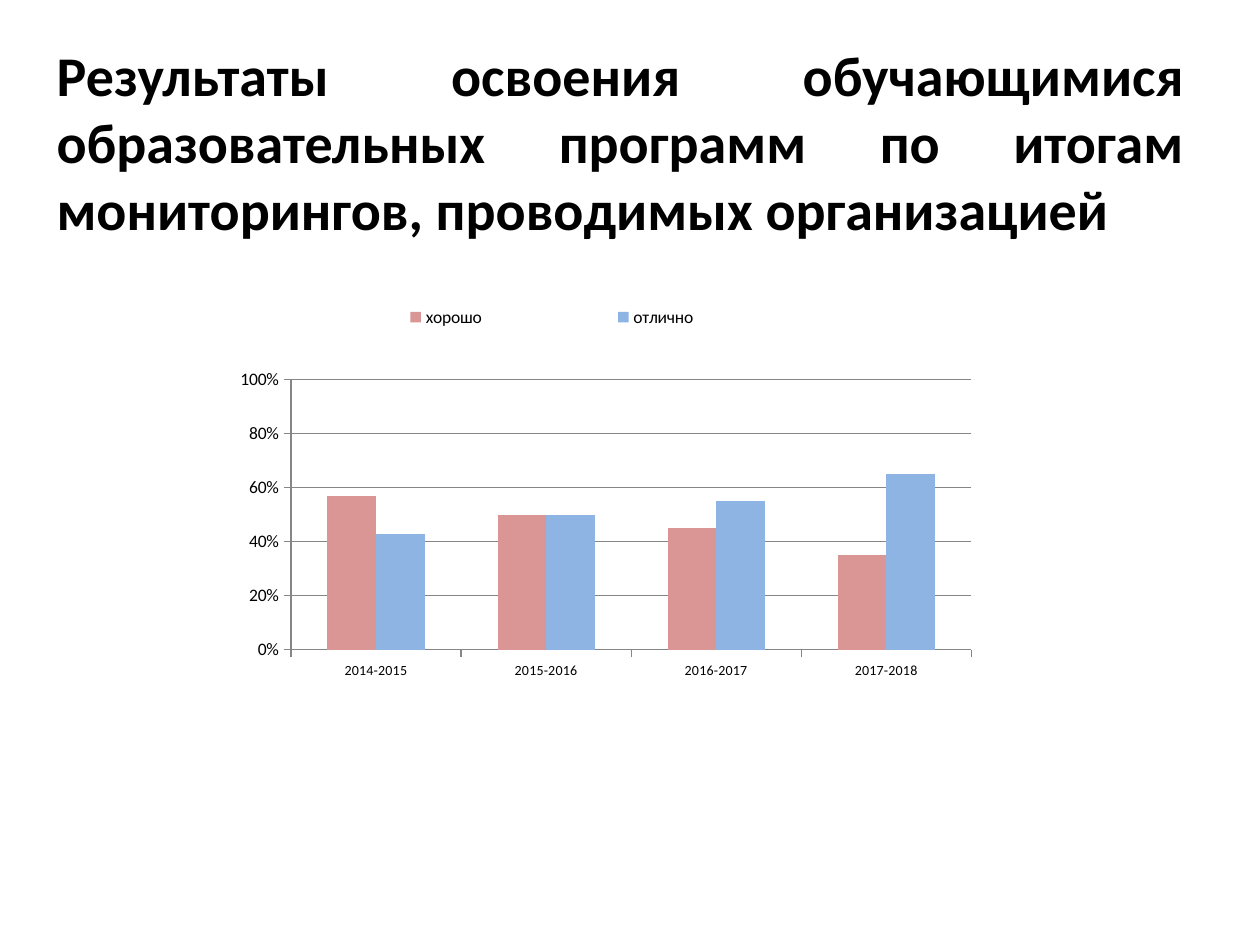
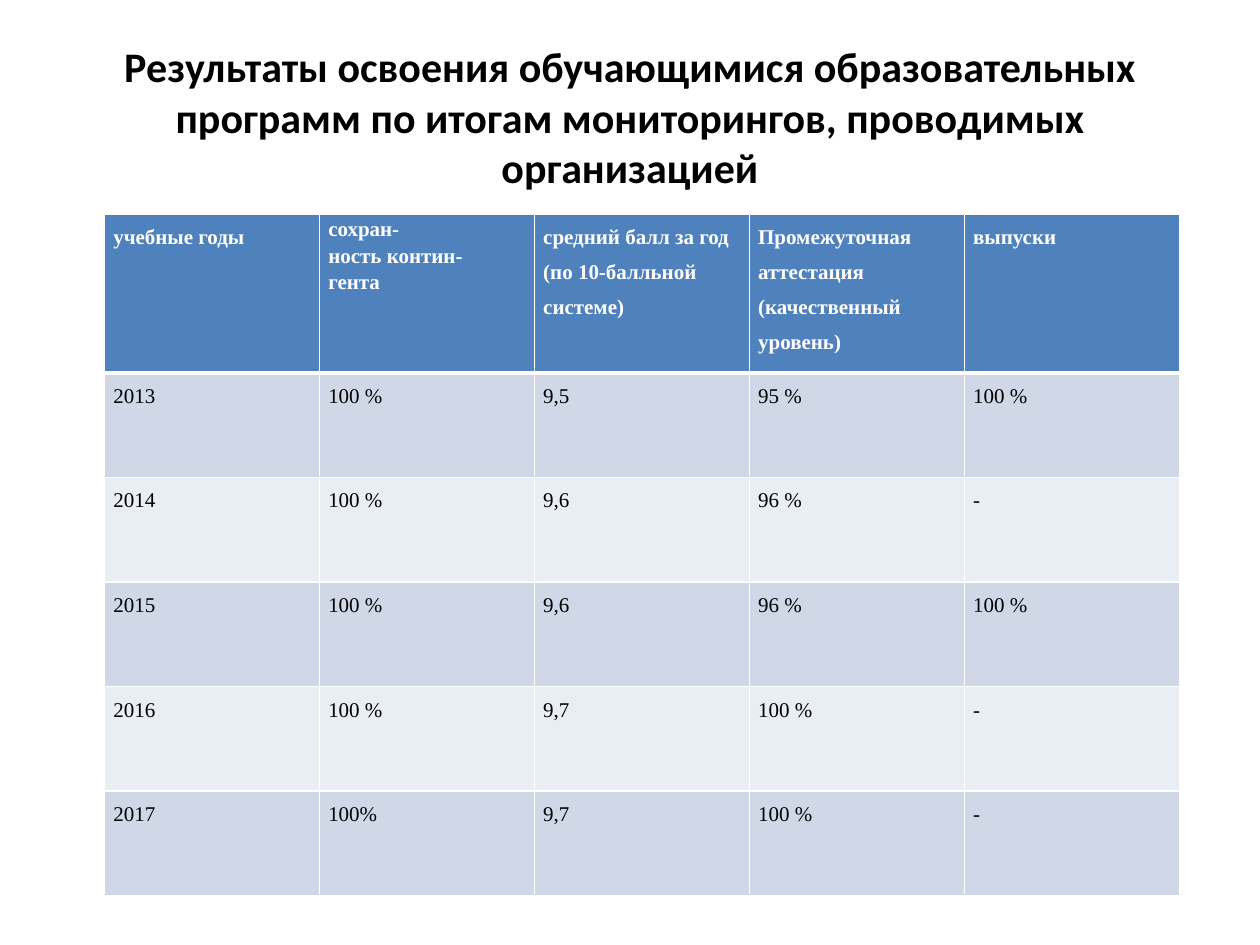
from lxml import etree
from pptx import Presentation
from pptx.chart.data import CategoryChartData
from pptx.dml.color import RGBColor
from pptx.enum.chart import XL_CHART_TYPE as ChartType, XL_LEGEND_POSITION as LegendPosition
from pptx.enum.chart import XL_TICK_MARK as TickMark
from pptx.enum.text import MSO_ANCHOR as Anchor, PP_ALIGN as Align
from pptx.oxml import parse_xml
from pptx.oxml.ns import nsdecls, qn
from pptx.util import Inches, Pt

COLORS = {
    "text": "000000",
    "white": "FFFFFF",
    "header": "4F81BD",
    "band_dark": "D0D8E8",
    "band_light": "E9EDF4",
    "good": "D99694",
    "excellent": "8EB4E3",
    "axis": "868686",
}
TITLE = ("Результаты освоения обучающимися образовательных программ "
         "по итогам мониторингов, проводимых организацией")


def add_run(paragraph, text, font_name, size, color, bold):
    run = paragraph.add_run()
    run.text = text
    run.font.name = font_name
    run.font.size = Pt(size)
    run.font.bold = bold
    run.font.color.rgb = RGBColor.from_string(COLORS[color])


def set_layout(element, x, y, width, height, inner=False):
    """Place a chart part by fractions of the chart's size."""
    layout = element.get_or_add_layout() if hasattr(element, "get_or_add_layout") else None
    if layout is None:
        layout = element.find(qn("c:layout"))
    if layout is None:
        layout = parse_xml(f"<c:layout {nsdecls('c')}/>")
        element.insert(1 if element.tag == qn("c:legend") else 0, layout)
    for child in list(layout):
        layout.remove(child)
    manual = etree.SubElement(layout, qn("c:manualLayout"))
    settings = [("layoutTarget", "inner")] if inner else []
    settings += [("xMode", "edge"), ("yMode", "edge"),
                 ("x", x), ("y", y), ("w", width), ("h", height)]
    for name, value in settings:
        etree.SubElement(manual, qn(f"c:{name}")).set("val", str(value))


presentation = Presentation()
presentation.slide_width = Inches(10)
presentation.slide_height = Inches(7.5)
blank_layout = presentation.slide_layouts[6]

# Both slides carry the same title
titles = [
    ((0.35, 0.3, 9.15, 1.64), 32, Align.JUSTIFY),
    ((0.5, 0.3, 9, 1.25), 24, Align.CENTER),
]
slides = []
for box, size, alignment in titles:
    slide = presentation.slides.add_slide(blank_layout)
    frame = slide.shapes.add_textbox(*map(Inches, box)).text_frame
    frame.word_wrap = True
    frame.vertical_anchor = Anchor.MIDDLE
    paragraph = frame.paragraphs[0]
    paragraph.alignment = alignment
    add_run(paragraph, TITLE, "Calibri", size, "text", True)
    slides.append(slide)
chart_slide, table_slide = slides

# Slide 1: share of good and excellent results by year
chart_data = CategoryChartData(number_format="0%")
chart_data.categories = ["2014-2015", "2015-2016", "2016-2017", "2017-2018"]
chart_data.add_series("хорошо", [0.57, 0.5, 0.45, 0.35])
chart_data.add_series("отлично", [0.43, 0.5, 0.55, 0.65])
chart = chart_slide.shapes.add_chart(
    ChartType.COLUMN_CLUSTERED, *map(Inches, (0.51, 2.02, 9, 5.23)), chart_data).chart
chart.has_title = False
chart.font.name = "Calibri"
chart.font.size = Pt(10)
chart.font.color.rgb = RGBColor.from_string(COLORS["text"])

plot = chart.plots[0]
plot.gap_width = 150
plot.overlap = 0
plot.vary_by_categories = False
for series, color in zip(plot.series, ("good", "excellent")):
    series.format.fill.solid()
    series.format.fill.fore_color.rgb = RGBColor.from_string(COLORS[color])

value_axis, category_axis = chart.value_axis, chart.category_axis
value_axis.minimum_scale = 0
value_axis.maximum_scale = 1
value_axis.major_unit = 0.2
value_axis.has_major_gridlines = True
value_axis.tick_labels.number_format = "0%"
value_axis.tick_labels.number_format_is_linked = False
category_axis.tick_labels.font.size = Pt(8)
for axis in (value_axis, category_axis):
    axis.major_tick_mark = TickMark.OUTSIDE
    axis.minor_tick_mark = TickMark.NONE
for part in (value_axis, category_axis, value_axis.major_gridlines):
    part.format.line.color.rgb = RGBColor.from_string(COLORS["axis"])
    part.format.line.width = Pt(0.75)

chart.has_legend = True
chart.legend.position = LegendPosition.RIGHT
chart.legend.include_in_layout = False
plot_area = chart.element.find(".//" + qn("c:plotArea"))
legend = chart.element.find(".//" + qn("c:legend"))
set_layout(plot_area, 0.2, 0.19, 0.6, 0.41, inner=True)
set_layout(legend, 0.19, 0.05, 0.48, 0.09)

# Slide 2: monitoring results by school year
rows = [
    ["учебные годы", "сохран-\nность контин-\nгента",
     "средний балл за год\n(по 10-балльной системе)",
     "Промежуточная аттестация\n(качественный уровень)", "выпуски"],
    ["2013", "100 %", "9,5", "95 %", "100 %"],
    ["2014", "100 %", "9,6", "96 %", "-"],
    ["2015", "100 %", "9,6", "96 %", "100 %"],
    ["2016", "100 %", "9,7", "100 %", "-"],
    ["2017", "100%", "9,7", "100 %", "-"],
]
table = table_slide.shapes.add_table(
    len(rows), len(rows[0]), *map(Inches, (0.83, 1.7, 8.53, 5.43))).table
for column in table.columns:
    column.width = Inches(8.53 / len(rows[0]))
for row_index, texts in enumerate(rows):
    is_header = row_index == 0
    table.rows[row_index].height = Inches(1.26 if is_header else 0.83)
    fill = "header" if is_header else ("band_light", "band_dark")[row_index % 2]
    border_widths = {"L": 1, "R": 1, "T": 3 if row_index == 1 else 1, "B": 3 if is_header else 1}
    for column_index, text in enumerate(texts):
        cell = table.cell(row_index, column_index)
        cell.margin_left = cell.margin_right = Inches(0.07)
        cell.margin_top = cell.margin_bottom = 0
        for side, width in border_widths.items():
            cell._tc.get_or_add_tcPr().append(parse_xml(
                f'<a:ln{side} {nsdecls("a")} w="{Pt(width)}"><a:solidFill>'
                f'<a:srgbClr val="{COLORS["white"]}"/></a:solidFill></a:ln{side}>'))
        cell.fill.solid()
        cell.fill.fore_color.rgb = RGBColor.from_string(COLORS[fill])
        for line_index, line in enumerate(text.split("\n")):
            frame = cell.text_frame
            paragraph = frame.add_paragraph() if line_index else frame.paragraphs[0]
            paragraph.alignment = Align.JUSTIFY if column_index >= 3 else Align.LEFT
            paragraph.line_spacing = 1.15 if is_header and column_index == 1 else 1.5
            add_run(paragraph, line, "Times New Roman", 12,
                    "white" if is_header else "text", is_header)

presentation.save("out.pptx")
